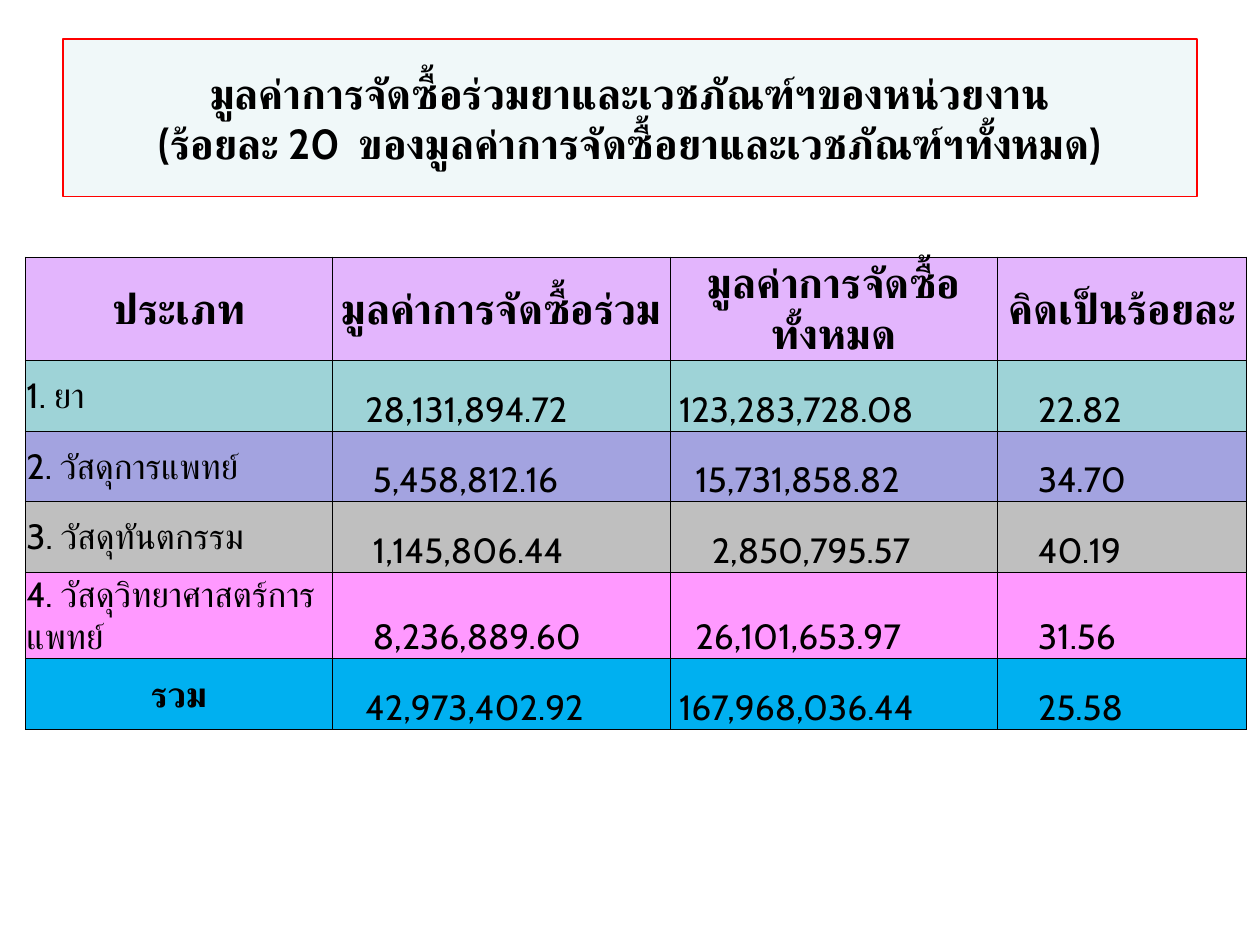
from lxml.etree import SubElement
from pptx import Presentation
from pptx.dml.color import RGBColor
from pptx.enum.text import MSO_ANCHOR as Anchor, PP_ALIGN as Align
from pptx.oxml.ns import qn
from pptx.util import Inches, Pt

FONT = "Cabin"
COLORS = {
    "text": "000000",
    "title_fill": "F0F8F9",
    "title_line": "FF0000",
    "border": "000000",
    "header": "E3B5FD",
    "medicine": "9ED3D7",
    "medical": "A3A3E0",
    "dental": "BFBFBF",
    "science": "FF99FF",
    "total": "00B0F0",
}
TITLE_LINES = [
    "มูลค่าการจัดซื้อร่วมยาและเวชภัณฑ์ฯของหน่วยงาน",
    "(ร้อยละ 20  ของมูลค่าการจัดซื้อยาและเวชภัณฑ์ฯทั้งหมด)",
]
PURCHASES = [
    ("header", ["ประเภท", "มูลค่าการจัดซื้อร่วม", "มูลค่าการจัดซื้อทั้งหมด", "คิดเป็นร้อยละ"]),
    ("medicine", ["1. ยา", "28,131,894.72", "123,283,728.08", "22.82"]),
    ("medical", ["2. วัสดุการแพทย์", "5,458,812.16", "15,731,858.82", "34.70"]),
    ("dental", ["3. วัสดุทันตกรรม", "1,145,806.44", "2,850,795.57", "40.19"]),
    ("science", ["4. วัสดุวิทยาศาสตร์การแพทย์", "8,236,889.60", "26,101,653.97", "31.56"]),
    ("total", ["รวม", "42,973,402.92", "167,968,036.44", "25.58"]),
]
COLUMN_WIDTHS = [2.44, 2.68, 2.6, 1.97]
ROW_HEIGHTS = [0.81, 0.56, 0.56, 0.56, 0.68, 0.56]
# Per value column: longest value's length, its indent, extra indent per missing character
VALUE_INDENTS = {1: (13, 0.26, 0.06), 2: (14, 0.07, 0.13), 3: (5, 0.32, 0)}


def rgb(name):
    return RGBColor.from_string(COLORS[name])


def add_run(paragraph, text, size, bold):
    run = paragraph.add_run()
    run.text = text
    run.font.name = FONT
    run.font.size = Pt(size)
    run.font.bold = bold
    run.font.color.rgb = rgb("text")
    # Thai glyphs take the complex-script font
    SubElement(run.font._element, qn("a:cs"), typeface=FONT)


def add_borders(cell):
    properties = cell._tc.get_or_add_tcPr()
    for side in ("lnL", "lnR", "lnT", "lnB"):
        border = SubElement(properties, qn(f"a:{side}"), w=str(Pt(0.5)))
        fill = SubElement(border, qn("a:solidFill"))
        SubElement(fill, qn("a:srgbClr"), val=COLORS["border"])


def place_title(slide, left, top, width, height):
    title = slide.shapes.title
    title.left, title.top = Inches(left), Inches(top)
    title.width, title.height = Inches(width), Inches(height)
    title.fill.solid()
    title.fill.fore_color.rgb = rgb("title_fill")
    title.line.color.rgb = rgb("title_line")
    title.line.width = Pt(0.75)
    frame = title.text_frame
    frame.word_wrap = True
    frame.vertical_anchor = Anchor.MIDDLE
    paragraph = frame.paragraphs[0]
    paragraph.alignment = Align.CENTER
    for index, line in enumerate(TITLE_LINES):
        if index:
            paragraph.add_line_break()
        add_run(paragraph, line, 24, True)


def fill_cell(cell, kind, column, text):
    is_header = kind == "header"
    is_value = column > 0 and not is_header
    is_heading = is_header or (kind == "total" and column == 0)
    indent = 0.01
    if is_value:
        longest, start, step = VALUE_INDENTS[column]
        indent = start + step * (longest - len(text))
    cell.margin_left = Inches(indent)
    cell.margin_top = cell.margin_right = Inches(0.01)
    cell.margin_bottom = 0
    cell.vertical_anchor = Anchor.BOTTOM if is_value else Anchor.MIDDLE
    add_borders(cell)
    cell.fill.solid()
    cell.fill.fore_color.rgb = rgb(kind)
    paragraph = cell.text_frame.paragraphs[0]
    paragraph.alignment = Align.CENTER if is_heading else Align.LEFT
    add_run(paragraph, text, 24 if is_header else 20, is_heading)


def add_purchase_table(slide, left, top):
    table = slide.shapes.add_table(
        len(PURCHASES), len(COLUMN_WIDTHS), Inches(left), Inches(top),
        Inches(sum(COLUMN_WIDTHS)), Inches(sum(ROW_HEIGHTS))).table
    table.horz_banding = False
    table.first_row = False
    for column, width in zip(table.columns, COLUMN_WIDTHS):
        column.width = Inches(width)
    for row, height, (kind, texts) in zip(table.rows, ROW_HEIGHTS, PURCHASES):
        row.height = Inches(height)
        for column, text in enumerate(texts):
            fill_cell(row.cells[column], kind, column, text)


def main():
    presentation = Presentation()
    presentation.slide_width, presentation.slide_height = Inches(10), Inches(7.5)
    slide = presentation.slides.add_slide(presentation.slide_layouts.get_by_name("Title Only"))
    place_title(slide, 0.5, 0.31, 9, 1.25)
    add_purchase_table(slide, 0.2, 2.04)
    presentation.save("out.pptx")


if __name__ == "__main__":
    main()
